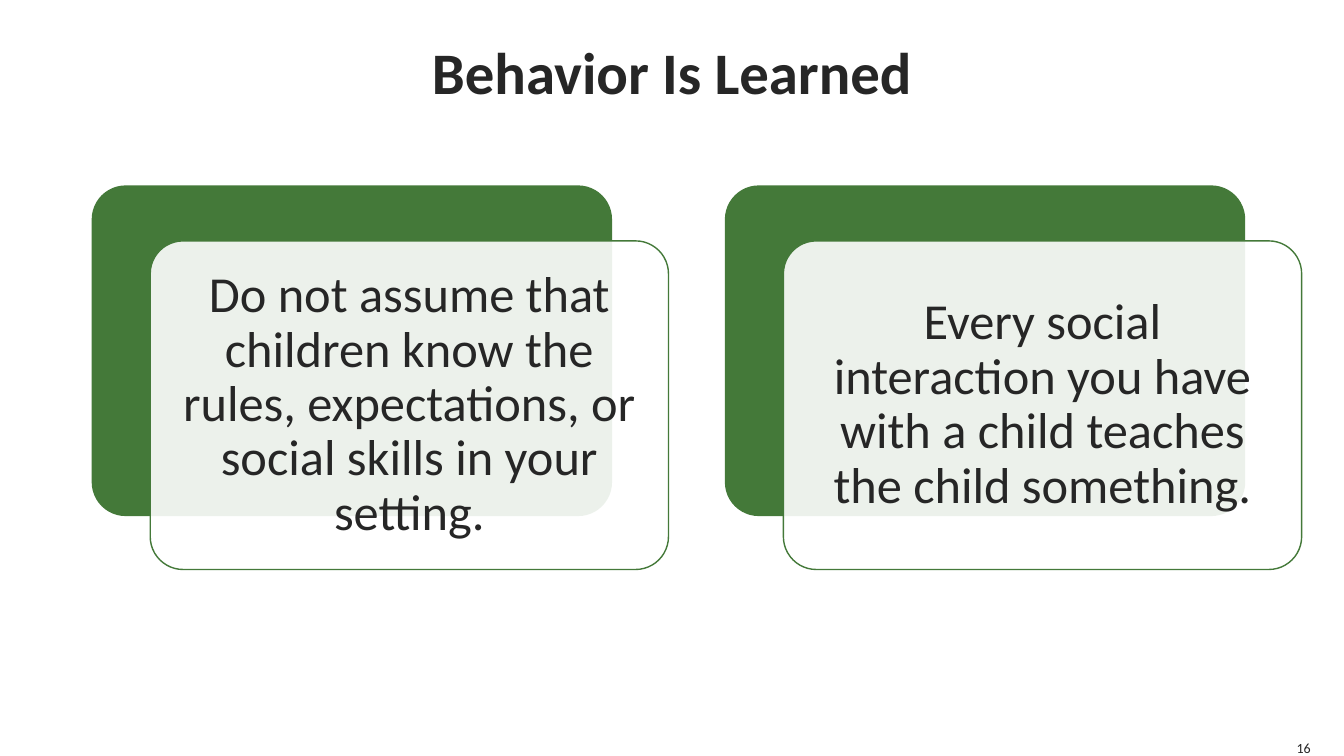
"""Build the "Behavior Is Learned" slide with two layered cards."""
from lxml.etree import SubElement
from pptx import Presentation
from pptx.dml.color import RGBColor
from pptx.enum.shapes import MSO_SHAPE as SHAPE
from pptx.enum.text import MSO_ANCHOR as ANCHOR, PP_ALIGN as ALIGN
from pptx.oxml.ns import qn
from pptx.util import Inches, Pt

GREEN = RGBColor(0x44, 0x79, 0x39)
WHITE = RGBColor(0xFF, 0xFF, 0xFF)
DARK = RGBColor(0x26, 0x26, 0x26)
CARD_W, CARD_H = 5.14, 3.26
CARD_LEFT, CARD_TOP, CARD_STEP = 0.92, 1.85, 6.28
SHIFT_X, SHIFT_Y = 0.57, 0.54
MESSAGES = [
    "Do not assume that children know the rules, expectations, or social skills in your setting.",
    "Every social interaction you have with a child teaches the child something.",
]


def write(tf, text, size, align=ALIGN.CENTER, anchor=ANCHOR.MIDDLE,
          inset=0, bold=False, wrap=True, spacing=1.0):
    tf.word_wrap = wrap
    tf.vertical_anchor = anchor
    tf.margin_left = tf.margin_right = Inches(inset)
    tf.margin_top = tf.margin_bottom = Inches(inset)
    p = tf.paragraphs[0]
    p.alignment = align
    p.line_spacing = spacing
    r = p.add_run()
    r.text = text
    r.font.name = "Calibri"
    r.font.size = Pt(size)
    r.font.bold = bold
    r.font.color.rgb = DARK


def add_card(s, left, top, fill, line_width):
    sp = s.shapes.add_shape(SHAPE.ROUNDED_RECTANGLE, Inches(left), Inches(top),
                            Inches(CARD_W), Inches(CARD_H))
    sp.adjustments[0] = 0.1
    sp.shadow.inherit = False
    sp.fill.solid()
    sp.fill.fore_color.rgb = fill
    sp.line.color.rgb = GREEN
    sp.line.width = Pt(line_width)
    return sp


prs = Presentation()
prs.slide_width, prs.slide_height = Inches(13.33), Inches(7.5)
s = prs.slides.add_slide(prs.slide_layouts[5])

title = s.shapes.title
title.left, title.top = Inches(0.5), Inches(0)
title.width, title.height = Inches(12.33), Inches(1.4)
write(title.text_frame, "Behavior Is Learned", 42, bold=True)

for i, message in enumerate(MESSAGES):
    left = CARD_LEFT + i * CARD_STEP
    add_card(s, left, CARD_TOP, GREEN, 1.5)
    panel = add_card(s, left + SHIFT_X, CARD_TOP + SHIFT_Y, WHITE, 1)
    color = panel.fill._xPr.find(qn("a:solidFill"))[0]
    SubElement(color, qn("a:alpha"), val="90000")
    write(panel.text_frame, message, 36, inset=0.15, spacing=0.9)

number = s.shapes.add_textbox(Inches(12.86), Inches(7.33), Inches(0.14), Inches(0.17))
write(number.text_frame, "16", 10, align=ALIGN.RIGHT, anchor=ANCHOR.BOTTOM, wrap=False)

prs.save("out.pptx")
